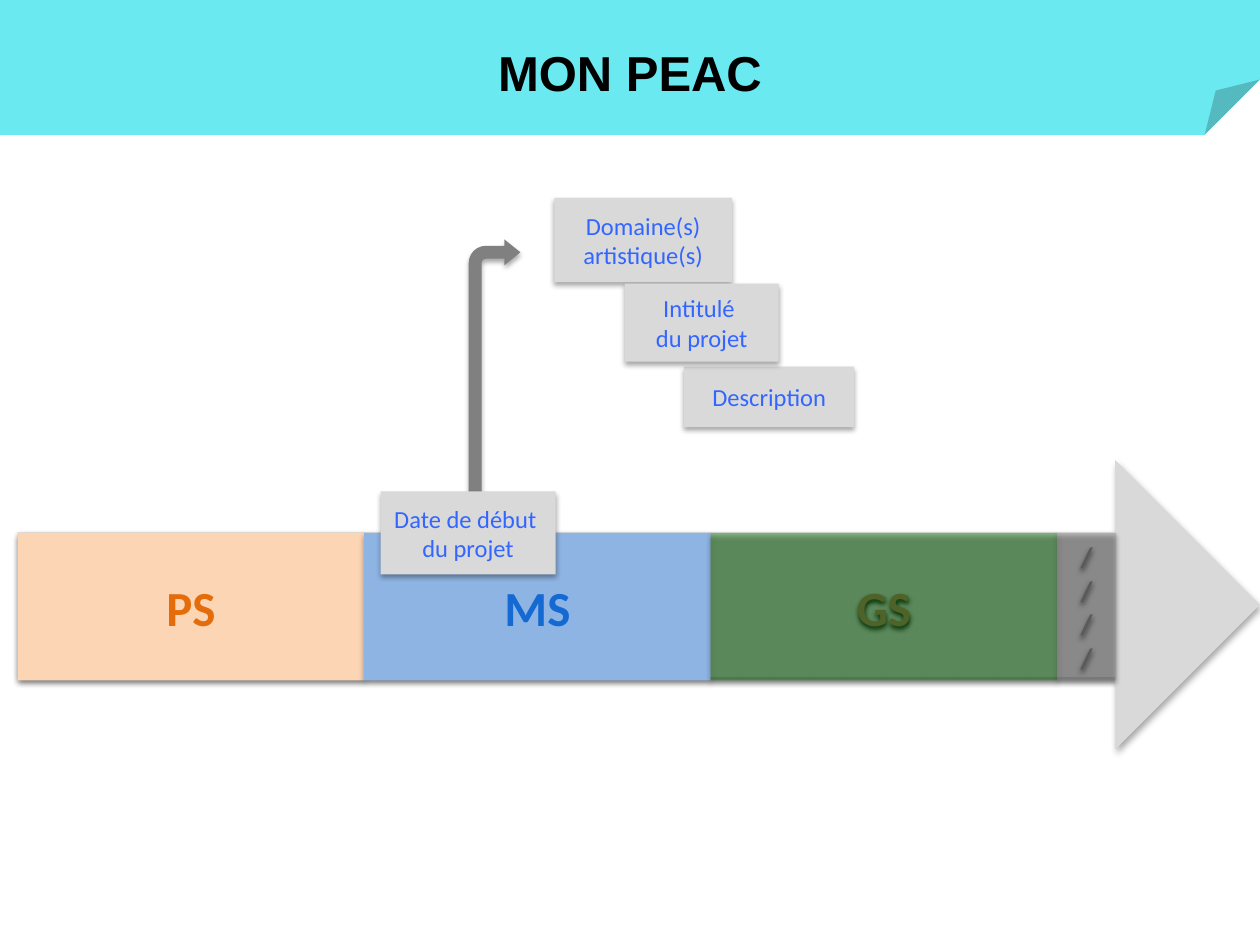
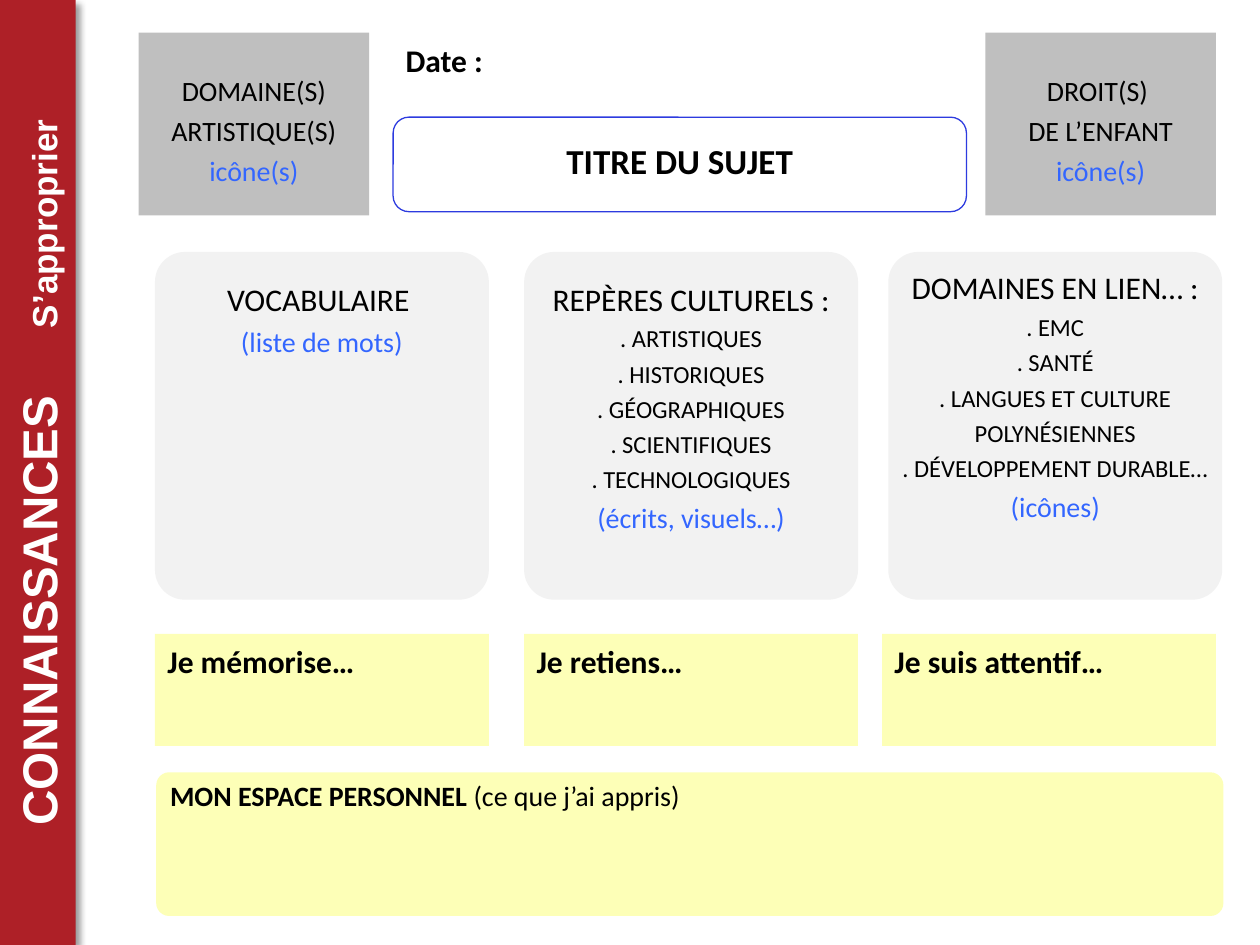
from lxml import etree
from pptx import Presentation
from pptx import util as u
from pptx.dml.color import RGBColor
from pptx.enum import shapes, text
from pptx.oxml.ns import qn

KIND = shapes.MSO_SHAPE
CENTER, LEFT = text.PP_ALIGN.CENTER, text.PP_ALIGN.LEFT
TOP, MIDDLE = text.MSO_ANCHOR.TOP, text.MSO_ANCHOR.MIDDLE

# Shared look
WIDTH, HEIGHT = 10, 7.5
BLACK, WHITE, BLUE = "000000", "FFFFFF", "3366FF"
PALE, CARD, GREY, DARK = "D9D9D9", "F2F2F2", "BFBFBF", "808080"
YELLOW = ("FDFFA0", 75)
SOFT = dict(alpha=35, blur=3.1, dist=1.8, angle=90)
DEEP = dict(alpha=40, blur=4, dist=3, angle=45)


def span(words, size, color=BLACK, bold=False, name="Calibri"):
    return words, dict(size=u.Pt(size), bold=bold, name=name), color


def lines(words, size, color=BLACK, bold=False):
    """One paragraph of a single span for each line of words."""
    return [[span(line, size, color, bold)] for line in words]


# Slide 1 content: school years, then the steps of a project
TIMELINE_TITLE = [[span("MON PEAC", 28, bold=True, name="Arial")]]
YEARS = [("PS", "FCD5B5", "E46C0A"),
         ("MS", "8EB4E3", "146AD2"),
         ("GS", ("008000", 35), "4F6228")]
YEAR_LEFT, YEAR_TOP, YEAR_WIDTH, YEAR_HEIGHT = 0.14, 4.23, 2.75, 1.17
STEPS = [(["Domaine(s) artistique(s)"], (4.4, 1.57, 1.41, 0.67)),
         (["Description"], (5.43, 2.91, 1.35, 0.48)),
         (["Intitulé ", "du projet"], (4.96, 2.25, 1.22, 0.62)),
         (["Date de début ", "du projet"], (3.02, 3.9, 1.39, 0.66))]

# Slide 2 content
SUBJECT_TITLE = [[span("TITRE DU SUJET", 20, bold=True)]]
ICON_BOXES = [(1.1, ["DOMAINE(S) ARTISTIQUE(S)"]),
              (7.82, ["DROIT(S) ", "DE L’ENFANT"])]
CARDS = [  # left, text top, heading, items, hint
    (1.23, 2.11, "VOCABULAIRE ", [], "(liste de mots)"),
    (4.16, 2.11, "REPÈRES CULTURELS :",
     [". ARTISTIQUES", ". HISTORIQUES", ". GÉOGRAPHIQUES",
      ". SCIENTIFIQUES", ". TECHNOLOGIQUES"], "(écrits, visuels…)"),
    (7.05, 2.02, "DOMAINES EN LIEN… :",
     [". EMC", ". SANTÉ", ". LANGUES ET CULTURE POLYNÉSIENNES",
      ". DÉVELOPPEMENT DURABLE…"], "(icônes)"),
]
NOTES = [(1.23, "Je mémorise…"), (4.16, "Je retiens…"),
         (7, "Je suis attentif…")]
COLUMN = 2.65
PERSONAL = [[span("MON ESPACE PERSONNEL ", 16, bold=True),
             span("(ce que j’ai appris)", 16)]]
SIDE_TITLE = [[span("CONNAISSANCES", 28, WHITE, True, "Arial"),
               span(" ", 28, WHITE, True, "Arial"),
               span("S’approprier", 20, WHITE, True, "Arial")]]
SIDE_GAP = 31  # points added to the space between the two words


def rgb(color):
    return RGBColor.from_string(color)


def place(box, at):
    for side, length in zip(("left", "top", "width", "height"), at):
        setattr(box, side, u.Inches(length))


def write(box, paragraphs, align=CENTER, anchor=MIDDLE, spacing=1.0):
    frame = box.text_frame
    for key, value in dict(word_wrap=True, vertical_anchor=anchor,
                           auto_size=text.MSO_AUTO_SIZE.NONE).items():
        setattr(frame, key, value)
    for number, spans in enumerate(paragraphs):
        para = frame.add_paragraph() if number else frame.paragraphs[0]
        for key, value in dict(alignment=align, line_spacing=spacing,
                               space_before=u.Pt(0)).items():
            setattr(para, key, value)
        if box.is_placeholder:  # plain lines, no inherited bullet
            props = para._p.get_or_add_pPr()
            props.set("marL", "0")
            props.set("indent", "0")
            etree.SubElement(props, qn("a:buNone"))
        for words, style, color in spans:
            run = para.add_run()
            run.text = words
            for key, value in style.items():
                setattr(run.font, key, value)
            run.font.color.rgb = rgb(color)


def add_shadow(box, alpha, blur, dist, angle):
    effects = box._element.spPr.find(qn("a:effectLst"))
    shadow = etree.SubElement(
        effects, qn("a:outerShdw"), blurRad=str(int(u.Pt(blur))),
        dist=str(int(u.Pt(dist))), dir=str(angle * 60000), rotWithShape="0")
    tint = etree.SubElement(shadow, qn("a:srgbClr"), val=BLACK)
    etree.SubElement(tint, qn("a:alpha"), val=str(alpha * 1000))


def set_adjustments(box, values):
    """Write the guides in XML, as some presets list none by default."""
    geometry = box._element.spPr.find(qn("a:prstGeom"))
    for guides in geometry.findall(qn("a:avLst")):
        geometry.remove(guides)
    guides = etree.SubElement(geometry, qn("a:avLst"))
    for number, value in enumerate(values, 1):
        name = f"adj{number}" if len(values) > 1 else "adj"
        etree.SubElement(guides, qn("a:gd"), name=name,
                         fmla=f"val {round(value * 100000)}")


def add_box(page, kind, at, fill=None, shadow=None, line=None, adjust=()):
    """Draw a preset shape; fill is a colour or (colour, opacity in %)."""
    box = page.shapes.add_shape(kind, *map(u.Inches, at))
    if adjust:
        set_adjustments(box, adjust)
    if fill is None:
        box.fill.background()
    else:
        color, alpha = fill if isinstance(fill, tuple) else (fill, 100)
        box.fill.solid()
        box.fill.fore_color.rgb = rgb(color)
        if alpha < 100:
            tint = box._element.spPr.find(qn("a:solidFill"))[0]
            etree.SubElement(tint, qn("a:alpha"), val=str(alpha * 1000))
    if line:
        box.line.color.rgb = rgb(line)
        box.line.width = u.Pt(0.75)
    else:
        box.line.fill.background()
    box.shadow.inherit = False
    if shadow:
        add_shadow(box, **shadow)
    return box


def add_text(page, at, paragraphs, **layout):
    write(page.shapes.add_textbox(*map(u.Inches, at)), paragraphs, **layout)


def fill_placeholder(box, at, paragraphs, **layout):
    """Move a template placeholder in front of what is drawn, and fill it."""
    box._element.getparent().append(box._element)
    place(box, at)
    write(box, paragraphs, **layout)


def build_timeline(deck):
    page = deck.slides.add_slide(deck.slide_layouts[5])

    # Big arrow with the three years on its shaft
    add_box(page, KIND.RIGHT_ARROW,
            (YEAR_LEFT, 3.65, WIDTH - YEAR_LEFT, 2.3), PALE, SOFT)
    for number, (year, fill, color) in enumerate(YEARS):
        left = YEAR_LEFT + number * YEAR_WIDTH
        box = add_box(page, KIND.RECTANGLE,
                      (left, YEAR_TOP, YEAR_WIDTH, YEAR_HEIGHT), fill, SOFT)
        write(box, lines([year], 28, color, True))

    # Project steps; the bent arrow goes under the last one, the date
    for words, at in STEPS:
        if words == STEPS[-1][0]:
            add_box(page, KIND.BENT_ARROW, (3.72, 1.9, 0.41, 2.31), DARK,
                    SOFT, adjust=(0.25, 0.25, 0.31, 0.33))
        box = add_box(page, KIND.RECTANGLE, at, PALE, SOFT)
        write(box, lines(words, 14, BLUE))

    # Title band
    add_box(page, KIND.FOLDED_CORNER, (0, 0, WIDTH, 1.07), "6BE9F1",
            adjust=(0.41,))
    fill_placeholder(page.shapes.title, (0, 0.22, WIDTH, 0.7), TIMELINE_TITLE)

    # Break marks at the end of the shaft
    end = YEAR_LEFT + len(YEARS) * YEAR_WIDTH
    box = add_box(page, KIND.RECTANGLE, (end, YEAR_TOP, 0.47, YEAR_HEIGHT),
                  (DARK, 35), SOFT)
    write(box, lines("////", 16, "595959", True))


def build_knowledge(deck):
    page = deck.slides.add_slide(deck.slide_layouts[4])
    title, *bodies = page.placeholders

    # Three rounded cards with their lists
    for body, (left, top, heading, items, hint) in zip(bodies, CARDS):
        add_box(page, KIND.ROUNDED_RECTANGLE, (left, 2, COLUMN, 2.76), CARD,
                adjust=(0.09,))
        fill_placeholder(
            body, (left, top, COLUMN, 2.6),
            lines([heading], 18) + lines(items, 14) + lines([hint], 16, BLUE),
            anchor=TOP, spacing=1.2)

    # Yellow notes and the personal space
    for left, words in NOTES:
        add_box(page, KIND.RECTANGLE, (left, 5.03, COLUMN, 0.89), YELLOW)
        add_text(page, (left, 5.05, COLUMN, 0.4),
                 lines([words], 18, bold=True), align=LEFT, anchor=TOP)
    add_box(page, KIND.ROUNDED_RECTANGLE, (1.24, 6.13, 8.47, 1.14), YELLOW,
            adjust=(0.09,))
    fill_placeholder(bodies[-1], (1.25, 6.13, 8.45, 0.37), PERSONAL,
                     align=LEFT, anchor=TOP)

    # Header: icon boxes around the date and the subject
    for left, words in ICON_BOXES:
        add_box(page, KIND.RECTANGLE, (left, 0.26, 1.83, 1.45), GREY)
        add_text(page, (left, 0.48, 1.83, 1.06),
                 lines(words, 16) + lines(["icône(s)"], 16, BLUE),
                 anchor=TOP, spacing=1.2)
    add_text(page, (3.12, 0.28, 4.55, 0.4), lines(["Date :"], 18, bold=True),
             align=LEFT, anchor=TOP)
    add_box(page, KIND.ROUNDED_RECTANGLE, (3.12, 0.93, 4.55, 0.75),
            line="2D3BDF")
    fill_placeholder(title, (3.12, 1.05, 4.55, 0.44), SUBJECT_TITLE)

    # Side band, read from bottom to top
    band = add_box(page, KIND.RECTANGLE, (0, 0, 0.6, HEIGHT), "AE2027", DEEP)
    write(band, SIDE_TITLE)
    band.text_frame._txBody.bodyPr.set("vert", "vert270")
    gap = band.text_frame.paragraphs[0].runs[1]
    gap.font._element.set("spc", str(SIDE_GAP * 100))


def main():
    deck = Presentation()
    deck.slide_width, deck.slide_height = u.Inches(WIDTH), u.Inches(HEIGHT)
    build_timeline(deck)
    build_knowledge(deck)
    deck.save("out.pptx")


if __name__ == "__main__":
    main()
